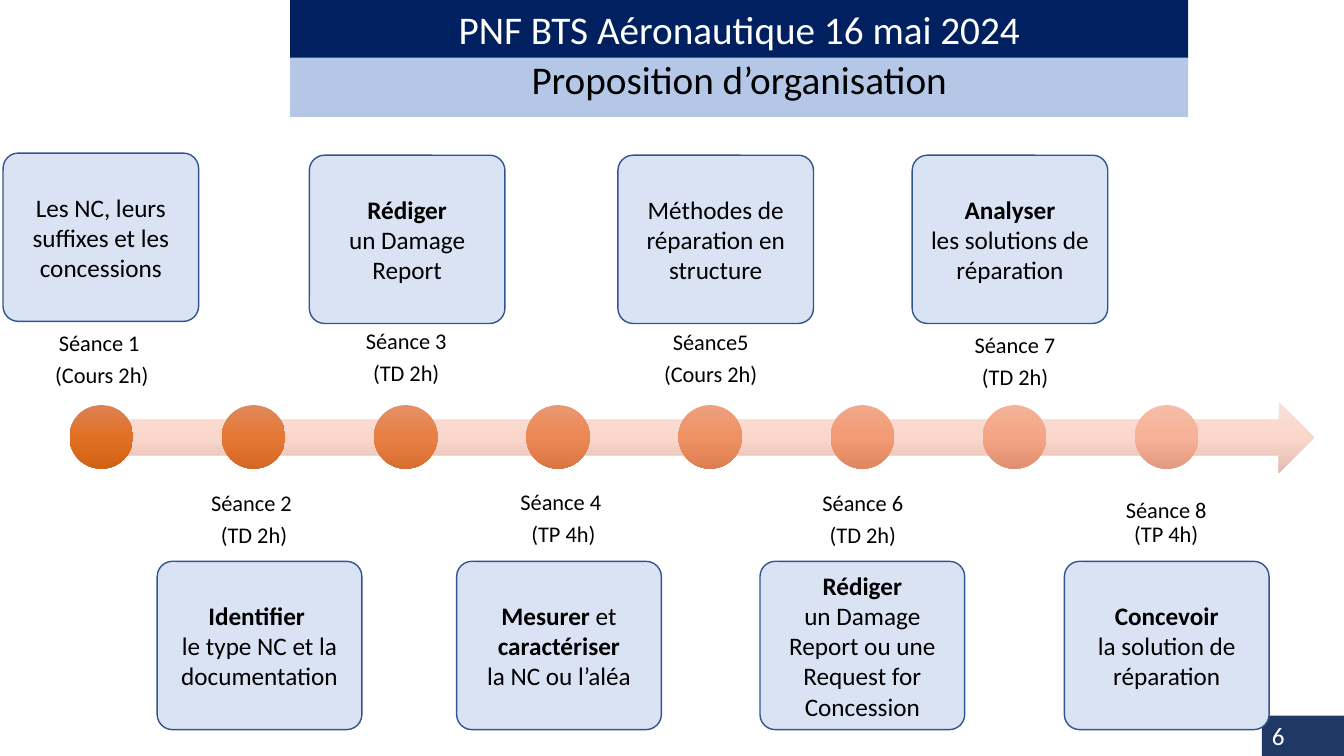
from copy import deepcopy

from lxml.etree import SubElement
from pptx import Presentation
from pptx.dml.color import RGBColor
from pptx.enum.shapes import MSO_SHAPE
from pptx.enum.text import MSO_ANCHOR, PP_ALIGN
from pptx.oxml.ns import qn
from pptx.util import Pt

BLACK = RGBColor(0x00, 0x00, 0x00)
WHITE = RGBColor(0xFF, 0xFF, 0xFF)
NAVY = RGBColor(0x00, 0x20, 0x60)
SLATE = RGBColor(0x20, 0x38, 0x64)
SKY = RGBColor(0xB4, 0xC7, 0xE7)
CARD_FILL = RGBColor(0xDA, 0xE3, 0xF3)
CARD_LINE = RGBColor(0x32, 0x54, 0x91)
ARROW_SHADES = (RGBColor(0xFA, 0xE0, 0xD8), RGBColor(0xFA, 0xD6, 0xCB), RGBColor(0xE2, 0xBC, 0xB1))
DOT_SHADES = [
    (RGBColor(0xDD, 0x82, 0x54), RGBColor(0xE0, 0x70, 0x24), RGBColor(0xD0, 0x62, 0x16)),
    (RGBColor(0xE1, 0x89, 0x5C), RGBColor(0xE4, 0x77, 0x33), RGBColor(0xD4, 0x68, 0x25)),
    (RGBColor(0xE5, 0x90, 0x66), RGBColor(0xE8, 0x7F, 0x43), RGBColor(0xD7, 0x6F, 0x33)),
    (RGBColor(0xE9, 0x98, 0x71), RGBColor(0xEC, 0x88, 0x53), RGBColor(0xDA, 0x76, 0x42)),
    (RGBColor(0xED, 0xA0, 0x7D), RGBColor(0xEF, 0x91, 0x63), RGBColor(0xDC, 0x7E, 0x51)),
    (RGBColor(0xF0, 0xA9, 0x8B), RGBColor(0xF2, 0x9B, 0x74), RGBColor(0xDE, 0x87, 0x60)),
    (RGBColor(0xF3, 0xB2, 0x99), RGBColor(0xF5, 0xA5, 0x85), RGBColor(0xE0, 0x90, 0x70)),
    (RGBColor(0xF6, 0xBD, 0xA8), RGBColor(0xF7, 0xB1, 0x96), RGBColor(0xE2, 0x9A, 0x80)),
]

SESSIONS = [
    (["Séance 1 ", "(Cours 2h)"], 20.9, 103.7, "Les NC, leurs suffixes et les concessions", 2.2, 109.4),
    (["Séance 2 ", "(TD 2h)"], 129.6, 342.7, "**Identifier \n**le type NC et la documentation", 112.3, 401),
    (["Séance 3", "(TD 2h)"], 238.3, 102.2, "**Rédiger\n**un Damage Report", 221, 110.9),
    (["Séance 4 ", "(TP 4h)"], 350.6, 342, "**Mesurer** et **caractériser\n**la NC ou l’aléa", 326.2, 401),
    (["Séance5", "(Cours 2h)"], 455.8, 103, "Méthodes de réparation en structure", 441.4, 110.9),
    (["Séance 6", "(TD 2h)"], 564.5, 342.7,
     "**Rédiger\n**un Damage Report ou une Request for Concession", 542.9, 401),
    (["Séance 7", "(TD 2h)"], 673.2, 105.1, "**Analyser\n**les solutions de réparation", 651.6, 110.9),
    (["Séance 8\n(TP 4h)"], 781.2, 347.8, "**Concevoir\n**la solution de réparation", 760.3, 401),
]
DOT_LEFT = 49.7
DOT_PITCH = 108.72


def write(shape, paragraphs, size=18, color=BLACK, font="Calibri", align=PP_ALIGN.CENTER,
          anchor=MSO_ANCHOR.TOP, spacing=1.0, gap=0, inset=None):
    frame = shape.text_frame
    frame.word_wrap = True
    frame.vertical_anchor = anchor
    if inset is not None:
        frame.margin_left = frame.margin_right = Pt(inset)
        frame.margin_top = frame.margin_bottom = Pt(inset)
    for position, content in enumerate(paragraphs):
        paragraph = frame.add_paragraph() if position else frame.paragraphs[0]
        paragraph.alignment = align
        paragraph.line_spacing = spacing
        if position:
            paragraph.space_before = Pt(gap)
        for part, passage in enumerate(content.split("**")):
            for row, line in enumerate(passage.split("\n")):
                if row:
                    paragraph.add_line_break()
                    SubElement(paragraph._p[-1], qn("a:rPr"), sz=str(size * 100))
                if line:
                    run = paragraph.add_run()
                    run.text = line
                    run.font.name = font
                    run.font.size = Pt(size)
                    run.font.bold = part % 2 == 1
                    run.font.color.rgb = color


class TimelineSlide:
    def __init__(self, slide):
        self.slide = slide
        self.card_style = {"size": 18, "anchor": MSO_ANCHOR.MIDDLE}
        self.label_style = {"size": 16, "spacing": 0.9, "gap": 5.6, "inset": 8.64}

    def shape(self, kind, left, top, width, height):
        shape = self.slide.shapes.add_shape(kind, Pt(left), Pt(top), Pt(width), Pt(height))
        shape.shadow.inherit = False
        shape.line.fill.background()
        return shape

    def banner(self, text, left, top, width, height, fill, **text_format):
        banner = self.shape(MSO_SHAPE.RECTANGLE, left, top, width, height)
        banner.fill.solid()
        banner.fill.fore_color.rgb = fill
        write(banner, [text], **text_format)

    def shaded(self, kind, left, top, width, height, shades):
        shaded = self.shape(kind, left, top, width, height)
        shaded.fill.gradient()
        shaded.fill.gradient_angle = 270
        stops = shaded._element.spPr.find(qn("a:gradFill")).find(qn("a:gsLst"))
        stops.insert(1, deepcopy(stops[0]))
        for stop, position, shade in zip(shaded.fill.gradient_stops, (0, 0.5, 1), shades):
            stop.position = position
            stop.color.rgb = shade

    def card(self, text, left, top, width):
        card = self.shape(MSO_SHAPE.ROUNDED_RECTANGLE, left, top, width, 120.2)
        card.adjustments[0] = 0.09
        card.fill.solid()
        card.fill.fore_color.rgb = CARD_FILL
        card.line.color.rgb = CARD_LINE
        card.line.width = Pt(1)
        write(card, [text], **self.card_style)

    def label(self, lines, left, top, anchor):
        label = self.slide.shapes.add_textbox(Pt(left), Pt(top), Pt(103.7), Pt(182.2))
        write(label, lines, anchor=anchor, **self.label_style)


def main():
    deck = Presentation()
    deck.slide_width = Pt(960)
    deck.slide_height = Pt(540)
    timeline = TimelineSlide(deck.slides.add_slide(deck.slide_layouts[6]))

    timeline.banner("6", 901.4, 511.2, 58.6, 28.8, SLATE, color=WHITE, align=PP_ALIGN.LEFT)
    timeline.banner("Proposition d’organisation", 207.2, 39.6, 641.5, 44, SKY, size=28, spacing=0.9)
    timeline.banner("PNF BTS Aéronautique 16 mai 2024", 207.2, 0, 641.5, 41.2, NAVY, size=28, color=WHITE)
    timeline.shaded(MSO_SHAPE.NOTCHED_RIGHT_ARROW, 62.6, 287.2, 876.2, 50.5, ARROW_SHADES)

    for order, (session, shades) in enumerate(zip(SESSIONS, DOT_SHADES)):
        lines, label_left, label_top, task, card_left, card_top = session
        above = order % 2 == 0
        timeline.label(lines, label_left, label_top, MSO_ANCHOR.BOTTOM if above else MSO_ANCHOR.TOP)
        timeline.shaded(MSO_SHAPE.OVAL, DOT_LEFT + order * DOT_PITCH, 289.4, 45.4, 45.4, shades)
        timeline.card(task, card_left, card_top, 139.7 if above else 146.2)

    deck.save("out.pptx")


if __name__ == "__main__":
    main()
